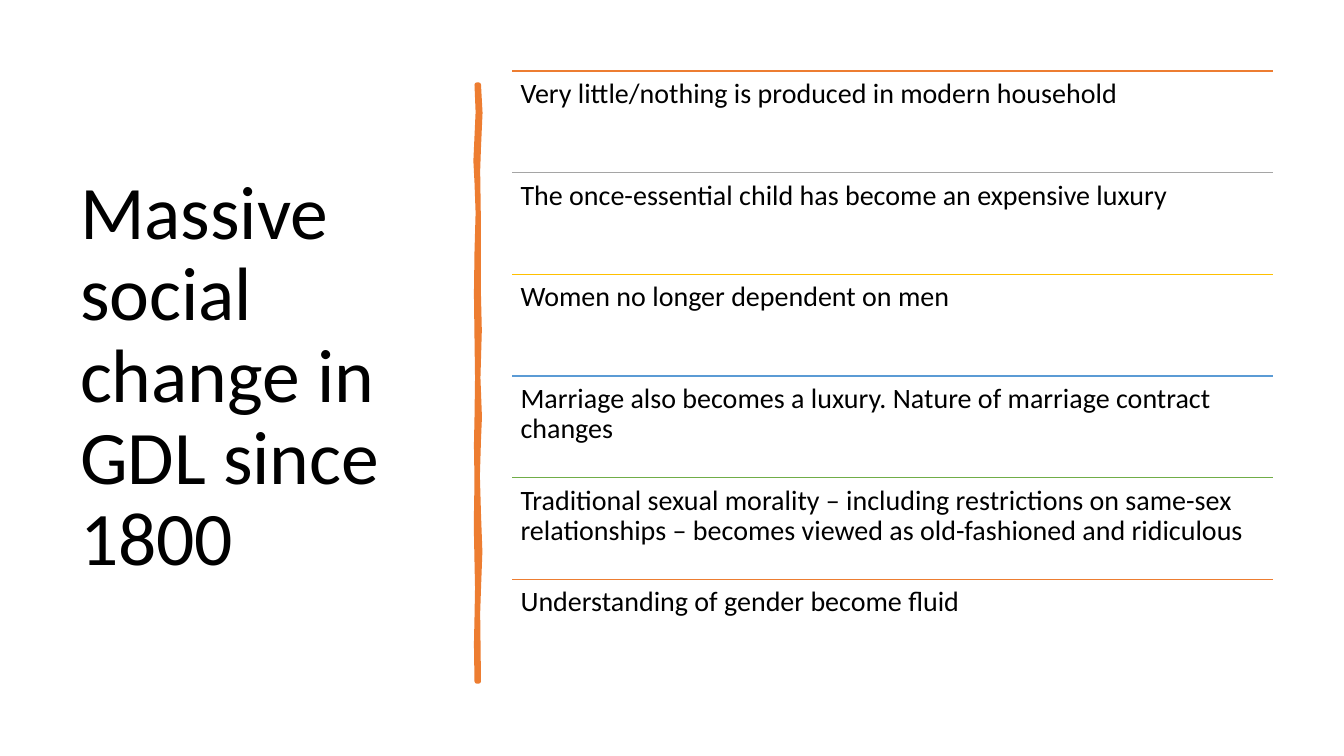
from dataclasses import dataclass

import lxml.etree
import pptx
import pptx.dml.color
import pptx.enum.shapes
import pptx.enum.text
import pptx.oxml.ns
import pptx.slide
import pptx.text.text
import pptx.util

Pt = pptx.util.Pt
RGBColor = pptx.dml.color.RGBColor
Anchor = pptx.enum.text.MSO_ANCHOR

BLACK = RGBColor(0x00, 0x00, 0x00)
ORANGE = RGBColor(0xED, 0x7D, 0x31)
GRAY = RGBColor(0xA5, 0xA5, 0xA5)
GOLD = RGBColor(0xFF, 0xC0, 0x00)
BLUE = RGBColor(0x5B, 0x9B, 0xD5)
GREEN = RGBColor(0x70, 0xAD, 0x47)

LIST_LEFT = 365.8
LIST_TOP = 50.6
LIST_WIDTH = 543.6
ROW_HEIGHT = 72.64


@dataclass(frozen=True)
class Change:
    text: str
    color: RGBColor


CHANGES = [
    Change("Very little/nothing is produced in modern household", ORANGE),
    Change("The once-essential child has become an expensive luxury", GRAY),
    Change("Women no longer dependent on men", GOLD),
    Change("Marriage also becomes a luxury. Nature of marriage contract changes", BLUE),
    Change(
        "Traditional sexual morality – including restrictions on same-sex "
        "relationships – becomes viewed as old-fashioned and ridiculous",
        GREEN,
    ),
    Change("Understanding of gender become fluid", ORANGE),
]

BRUSH_OUTLINE = [
    (342, 60.5), (343.1, 80.6), (342, 105.1), (341.4, 122), (342, 162.7),
    (342, 211.7), (342.6, 236), (342, 256.3), (341.6, 270), (342.7, 298),
    (342, 313.9), (341.2, 340), (342, 367.2), (343, 394), (342, 420.5),
    (341.4, 438), (342, 486.7), (340.6, 486.7), (340.2, 460), (340.6, 441.4),
    (341, 420), (340.6, 401), (340.1, 375), (340.6, 343.4), (340.2, 318),
    (340.6, 298.8), (341, 270), (340.6, 241.2), (340.2, 210), (340.6, 180),
    (341.4, 152), (340.6, 130.3), (339.8, 115), (341.4, 80), (340.6, 60.5),
]


def write_text(
    frame: pptx.text.text.TextFrame,
    text: str,
    *,
    size: float,
    anchor: Anchor,
    horizontal_inset: float,
    vertical_inset: float,
) -> None:
    frame.word_wrap = True
    frame.auto_size = pptx.enum.text.MSO_AUTO_SIZE.NONE
    frame.vertical_anchor = anchor
    frame.margin_left = frame.margin_right = Pt(horizontal_inset)
    frame.margin_top = frame.margin_bottom = Pt(vertical_inset)
    paragraph = frame.paragraphs[0]
    paragraph.alignment = pptx.enum.text.PP_ALIGN.LEFT
    paragraph.line_spacing = 0.9
    run = paragraph.add_run()
    run.text = text
    run.font.name = "Calibri"
    run.font.size = Pt(size)
    run.font.color.rgb = BLACK


def add_title(slide: pptx.slide.Slide) -> None:
    title = slide.shapes.title
    title.left, title.top = Pt(50), Pt(50)
    title.width, title.height = Pt(269), Pt(440)
    write_text(
        title.text_frame,
        "Massive social change in GDL since 1800",
        size=54,
        anchor=Anchor.MIDDLE,
        horizontal_inset=7.2,
        vertical_inset=3.6,
    )


def add_brush_stroke(slide: pptx.slide.Slide) -> None:
    points = [(Pt(x), Pt(y)) for x, y in BRUSH_OUTLINE]
    builder = slide.shapes.build_freeform(*points[0])
    builder.add_line_segments(points[1:], close=True)
    stroke = builder.convert_to_shape()
    stroke.shadow.inherit = False
    stroke.fill.solid()
    stroke.fill.fore_color.rgb = ORANGE
    stroke.line.color.rgb = ORANGE
    stroke.line.width = Pt(3.25)
    outline = stroke._element.spPr.find(pptx.oxml.ns.qn("a:ln"))
    lxml.etree.SubElement(outline, pptx.oxml.ns.qn("a:round"))


def add_change(slide: pptx.slide.Slide, change: Change, top: float) -> None:
    rule = slide.shapes.add_connector(
        pptx.enum.shapes.MSO_CONNECTOR.STRAIGHT,
        Pt(LIST_LEFT), Pt(top), Pt(LIST_LEFT + LIST_WIDTH), Pt(top),
    )
    rule.line.color.rgb = change.color
    rule.line.width = Pt(1)
    properties = rule._element.spPr
    lxml.etree.SubElement(properties, pptx.oxml.ns.qn("a:effectLst"))
    box = slide.shapes.add_textbox(
        Pt(LIST_LEFT), Pt(top), Pt(LIST_WIDTH), Pt(ROW_HEIGHT)
    )
    write_text(
        box.text_frame,
        change.text,
        size=20,
        anchor=Anchor.TOP,
        horizontal_inset=6,
        vertical_inset=6,
    )


def main() -> None:
    presentation = pptx.Presentation()
    presentation.slide_width = Pt(960)
    presentation.slide_height = Pt(540)
    layout = presentation.slide_layouts.get_by_name("Title Only")
    slide = presentation.slides.add_slide(layout)
    add_title(slide)
    add_brush_stroke(slide)
    for index, change in enumerate(CHANGES):
        add_change(slide, change, LIST_TOP + index * ROW_HEIGHT)
    presentation.save("out.pptx")


if __name__ == "__main__":
    main()
